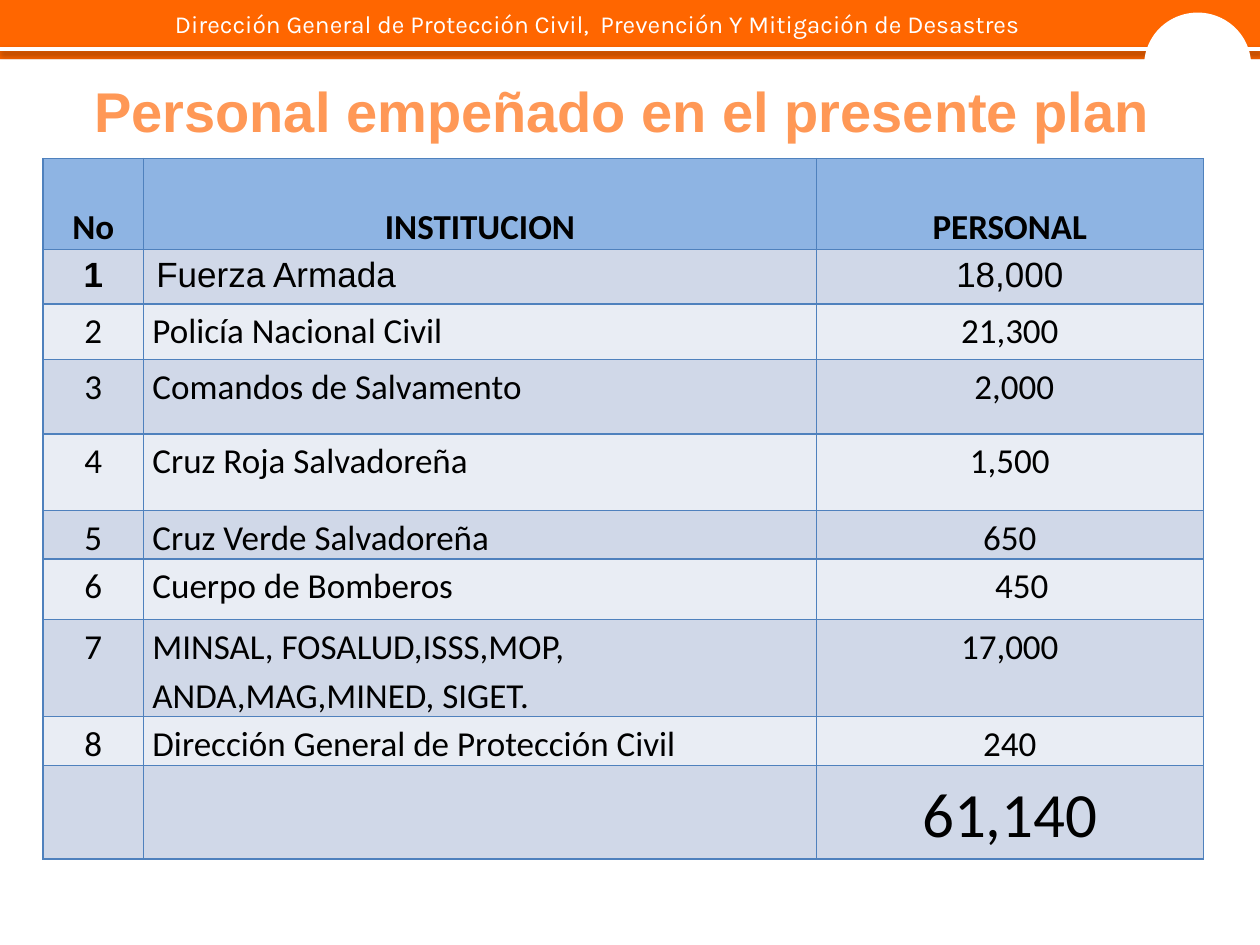
from lxml import etree
from pptx import Presentation
from pptx.dml.color import RGBColor
from pptx.enum import shapes, text
from pptx.oxml import parse_xml
from pptx.oxml.ns import nsdecls, qn
from pptx.util import Inches, Pt

BANNER = "Dirección General de Protección Civil,  Prevención Y Mitigación de Desastres"
TITLE = "Personal empeñado en el presente plan"
HEADINGS = ("No", "INSTITUCION", "PERSONAL")
STAFF = [
    ("1", "Fuerza Armada", "18,000"),
    ("2", "Policía Nacional Civil", "21,300"),
    ("3", "Comandos de Salvamento", "2,000"),
    ("4", "Cruz Roja Salvadoreña", "1,500"),
    ("5", "Cruz Verde Salvadoreña", "650"),
    ("6", "Cuerpo de Bomberos", "450"),
    ("7", "MINSAL, FOSALUD,ISSS,MOP, ANDA,MAG,MINED, SIGET.", "17,000"),
    ("8", "Dirección General de Protección Civil", "240"),
]
ROWS = [HEADINGS, *STAFF, ("", "", "61,140")]
COLUMN_WIDTHS = (0.8, 5.34, 3.07)
ROW_HEIGHTS = (0.72, 0.43, 0.44, 0.59, 0.61, 0.38, 0.48, 0.77, 0.39, 0.74)
SHIFTED_FIGURES = {"2,000": 0.07, "450": 0.19}
ORANGE, WHITE, BORDER = "FF6600", "FFFFFF", "4F81BD"


def rgb(value):
    return RGBColor.from_string(value)


def box(left, top, width, height):
    return [Inches(value) for value in (left, top, width, height)]


def add_run(paragraph, content, size, font, color, bold=False):
    run = paragraph.add_run()
    run.text = content
    run.font.size = Pt(size)
    run.font.name = font
    run.font.bold = bold
    run.font.color.rgb = rgb(color)


def add_solid(slide, kind, place, color):
    shape = slide.shapes.add_shape(kind, *box(*place))
    shape.shadow.inherit = False
    shape.fill.solid()
    shape.fill.fore_color.rgb = rgb(color)
    shape.line.fill.background()


def add_banner(slide):
    add_solid(slide, shapes.MSO_SHAPE.RECTANGLE, (0, 0, 10, 0.47), ORANGE)
    line = slide.shapes.add_connector(
        shapes.MSO_CONNECTOR.STRAIGHT, *box(0, 0.39, 10, 0.39))
    line.line.color.rgb = rgb(WHITE)
    line.line.width = Pt(2)
    line._element.spPr.append(parse_xml(
        f'<a:effectLst {nsdecls("a")}>'
        f'<a:outerShdw blurRad="{Pt(3.1)}" dist="{Pt(1.6)}" dir="5400000" rotWithShape="0">'
        '<a:srgbClr val="000000"><a:alpha val="38000"/></a:srgbClr>'
        '</a:outerShdw></a:effectLst>'))
    frame = slide.shapes.add_textbox(*box(1.29, 0.02, 8.91, 0.33)).text_frame
    frame.word_wrap = True
    paragraph = frame.paragraphs[0]
    paragraph.alignment = text.PP_ALIGN.JUSTIFY
    add_run(paragraph, BANNER, 14, "Karla", WHITE)
    add_solid(slide, shapes.MSO_SHAPE.OVAL, (9.08, 0.1, 0.85, 0.84), WHITE)


def add_title(slide):
    title = slide.shapes.title
    title.left, title.top, title.width, title.height = box(0.62, 0.55, 8.64, 0.64)
    frame = title.text_frame
    frame.word_wrap = False
    frame.auto_size = text.MSO_AUTO_SIZE.NONE
    frame.vertical_anchor = text.MSO_ANCHOR.MIDDLE
    paragraph = frame.paragraphs[0]
    paragraph.alignment = text.PP_ALIGN.CENTER
    add_run(paragraph, TITLE, 32, "Arial", "FF9856", True)


def set_borders(cell):
    properties = cell._tc.get_or_add_tcPr()
    for position, side in enumerate(("lnL", "lnR", "lnT", "lnB")):
        border = etree.Element(qn(f"a:{side}"), w=str(Pt(1)))
        fill = etree.SubElement(border, qn("a:solidFill"))
        etree.SubElement(fill, qn("a:srgbClr"), val=BORDER)
        properties.insert(position, border)


def format_cell(cell, content, row, column):
    heading, first, total = row == 0, row == 1, row == len(ROWS) - 1
    cell.fill.solid()
    cell.fill.fore_color.rgb = rgb(
        "8EB4E3" if heading else "D0D8E8" if row % 2 else "E9EDF4")
    set_borders(cell)
    side, edge = (0.1, 0.05) if first else (0.07, 0)
    cell.margin_left = Inches(side + SHIFTED_FIGURES.get(content, 0))
    cell.margin_right = Inches(side)
    cell.margin_top = cell.margin_bottom = Inches(edge)
    cell.vertical_anchor = text.MSO_ANCHOR.BOTTOM if heading else text.MSO_ANCHOR.TOP
    if not content:
        return
    paragraph = cell.text_frame.paragraphs[0]
    centered = heading or column != 1
    paragraph.alignment = text.PP_ALIGN.CENTER if centered else text.PP_ALIGN.LEFT
    paragraph.line_spacing = 1.0 if first else 1.15
    add_run(paragraph, content, 36 if total else 20, "Arial" if first else "Calibri",
            "000000", heading or (first and column == 0))


def add_staff_table(slide):
    table = slide.shapes.add_table(
        len(ROWS), len(HEADINGS),
        *box(0.34, 1.26, sum(COLUMN_WIDTHS), sum(ROW_HEIGHTS))).table
    table.first_row = table.horz_banding = False
    for column, width in zip(table.columns, COLUMN_WIDTHS):
        column.width = Inches(width)
    for row, height in zip(table.rows, ROW_HEIGHTS):
        row.height = Inches(height)
    for row, values in enumerate(ROWS):
        for column, content in enumerate(values):
            format_cell(table.cell(row, column), content, row, column)


def main():
    presentation = Presentation()
    presentation.slide_width, presentation.slide_height = Inches(10), Inches(7.5)
    slide = presentation.slides.add_slide(presentation.slide_layouts[5])
    add_banner(slide)
    add_title(slide)
    add_staff_table(slide)
    presentation.save("out.pptx")


if __name__ == "__main__":
    main()
